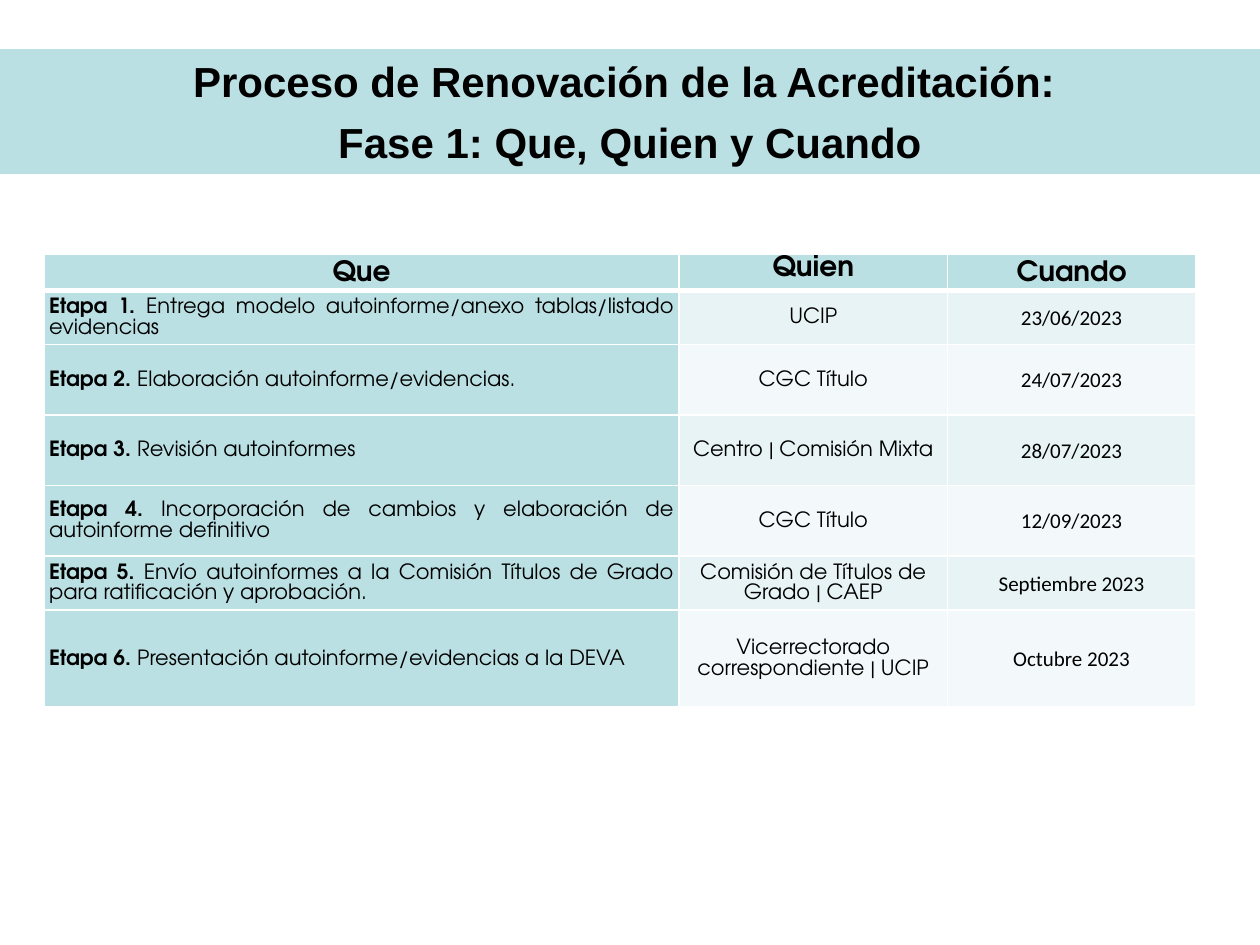
from dataclasses import dataclass

from lxml.etree import SubElement
from pptx import Presentation
from pptx.dml.color import RGBColor
from pptx.enum.shapes import MSO_SHAPE
from pptx.enum.text import MSO_ANCHOR, MSO_AUTO_SIZE, PP_ALIGN
from pptx.oxml.ns import qn
from pptx.util import Inches, Pt


@dataclass(frozen=True)
class Theme:
    accent: str = "BBE0E3"
    bands: tuple[str, str] = ("E7F3F4", "F3F9FA")
    border: str = "FFFFFF"
    ink: str = "000000"
    title_font: str = "Arial"
    table_font: str = "TeX Gyre Adventor"
    date_font: str = "Calibri"
    title_size: int = 24
    header_size: int = 16
    body_size: int = 12
    thin_border: int = 1
    thick_border: int = 3


@dataclass(frozen=True)
class Stage:
    what: str
    who: str
    when: str
    height: float


THEME = Theme()
TITLE = "Proceso de Renovación de la Acreditación: \nFase 1: Que, Quien y Cuando"
HEADERS = ("Que", "Quien", "Cuando")
HEADER_HEIGHT = 0.24
COLUMN_WIDTHS = (5.04, 2.13, 1.97)
STAGES = (
    Stage("Entrega modelo autoinforme/anexo tablas/listado evidencias",
          "UCIP", "23/06/2023", 0.41),
    Stage("Elaboración autoinforme/evidencias. ", "CGC Título", "24/07/2023", 0.56),
    Stage("Revisión autoinformes ", "Centro | Comisión Mixta", "28/07/2023", 0.56),
    Stage("Incorporación de cambios y elaboración de autoinforme definitivo",
          "CGC Título", "12/09/2023", 0.56),
    Stage("Envío autoinformes a la Comisión Títulos de Grado para ratificación y aprobación.",
          "Comisión de Títulos de Grado | CAEP", "Septiembre 2023", 0.43),
    Stage("Presentación autoinforme/evidencias a la DEVA ",
          "Vicerrectorado correspondiente | UCIP", "Octubre 2023", 0.77),
)


def format_run(run, font: str, size: int, bold: bool = False) -> None:
    run.font.name = font
    run.font.size = Pt(size)
    run.font.bold = bold
    run.font.color.rgb = RGBColor.from_string(THEME.ink)


def set_borders(cell, top: int, bottom: int) -> None:
    """Add the four borders ahead of the fill, as the schema orders them."""
    thin = THEME.thin_border
    properties = cell._tc.get_or_add_tcPr()
    for side, width in (("L", thin), ("R", thin), ("T", top), ("B", bottom)):
        line = SubElement(properties, qn(f"a:ln{side}"), w=str(Pt(width)))
        fill = SubElement(line, qn("a:solidFill"))
        SubElement(fill, qn("a:srgbClr"), val=THEME.border)


def fill_cell(cell, text: str, fill: str, font: str, size: int, bold: bool = False,
              align: PP_ALIGN = PP_ALIGN.CENTER, top: int = THEME.thin_border,
              bottom: int = THEME.thin_border) -> None:
    set_borders(cell, top, bottom)
    cell.fill.solid()
    cell.fill.fore_color.rgb = RGBColor.from_string(fill)
    cell.margin_left = cell.margin_right = Inches(0.04)
    cell.margin_top = cell.margin_bottom = 0
    cell.vertical_anchor = MSO_ANCHOR.MIDDLE
    cell.text_frame.text = text
    paragraph = cell.text_frame.paragraphs[0]
    paragraph.alignment = align
    paragraph.line_spacing = 1.07
    paragraph.space_after = Pt(8)
    format_run(paragraph.runs[0], font, size, bold)


def add_title(slide) -> None:
    band = slide.shapes.add_shape(
        MSO_SHAPE.RECTANGLE, 0, Inches(0.39), Inches(10), Inches(0.99))
    band.shadow.inherit = False
    band.fill.solid()
    band.fill.fore_color.rgb = RGBColor.from_string(THEME.accent)
    band.line.fill.background()
    frame = band.text_frame
    frame.word_wrap = True
    frame.auto_size = MSO_AUTO_SIZE.SHAPE_TO_FIT_TEXT
    frame.vertical_anchor = MSO_ANCHOR.TOP
    frame.text = TITLE
    for paragraph in frame.paragraphs:
        paragraph.alignment = PP_ALIGN.CENTER
        paragraph.space_before = Pt(6)
        format_run(paragraph.runs[0], THEME.title_font, THEME.title_size, bold=True)


def add_schedule(slide) -> None:
    heights = (HEADER_HEIGHT, *(stage.height for stage in STAGES))
    schedule = slide.shapes.add_table(
        len(heights), len(HEADERS), Inches(0.35), Inches(2.02),
        Inches(sum(COLUMN_WIDTHS)), Inches(sum(heights))).table
    schedule.first_row = schedule.horz_banding = False
    for column, width in zip(schedule.columns, COLUMN_WIDTHS):
        column.width = Inches(width)
    for row, height in zip(schedule.rows, heights):
        row.height = Inches(height)

    # Header row, with a thick rule below
    for column, header in enumerate(HEADERS):
        fill_cell(schedule.cell(0, column), header, THEME.accent, THEME.table_font,
                  THEME.header_size, bold=True, bottom=THEME.thick_border)
    schedule.cell(0, HEADERS.index("Quien")).vertical_anchor = MSO_ANCHOR.TOP

    # One row per stage, in alternating tints
    for number, stage in enumerate(STAGES, start=1):
        what, who, when = schedule.rows[number].cells
        tint = THEME.bands[(number - 1) % 2]
        top = THEME.thick_border if number == 1 else THEME.thin_border
        fill_cell(what, f"Etapa {number}. ", THEME.accent, THEME.table_font,
                  THEME.body_size, bold=True, align=PP_ALIGN.JUSTIFY, top=top)
        description = what.text_frame.paragraphs[0].add_run()
        description.text = stage.what
        format_run(description, THEME.table_font, THEME.body_size)
        fill_cell(who, stage.who, tint, THEME.table_font, THEME.body_size, top=top)
        fill_cell(when, stage.when, tint, THEME.date_font, THEME.body_size, top=top)


def main() -> None:
    presentation = Presentation()
    presentation.slide_width = Inches(10)
    presentation.slide_height = Inches(7.5)
    slide = presentation.slides.add_slide(presentation.slide_layouts[6])
    add_title(slide)
    add_schedule(slide)
    presentation.save("out.pptx")


if __name__ == "__main__":
    main()
